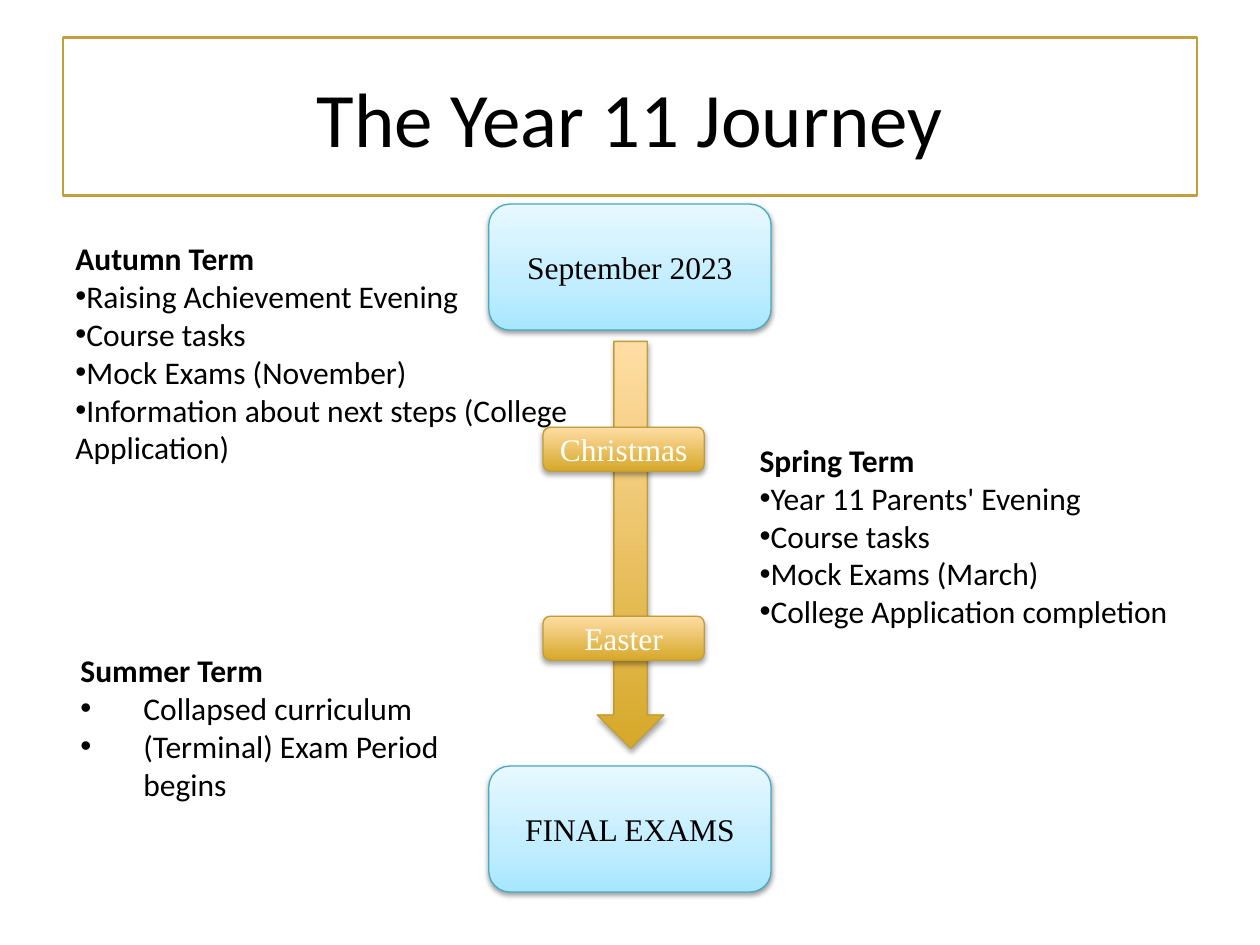
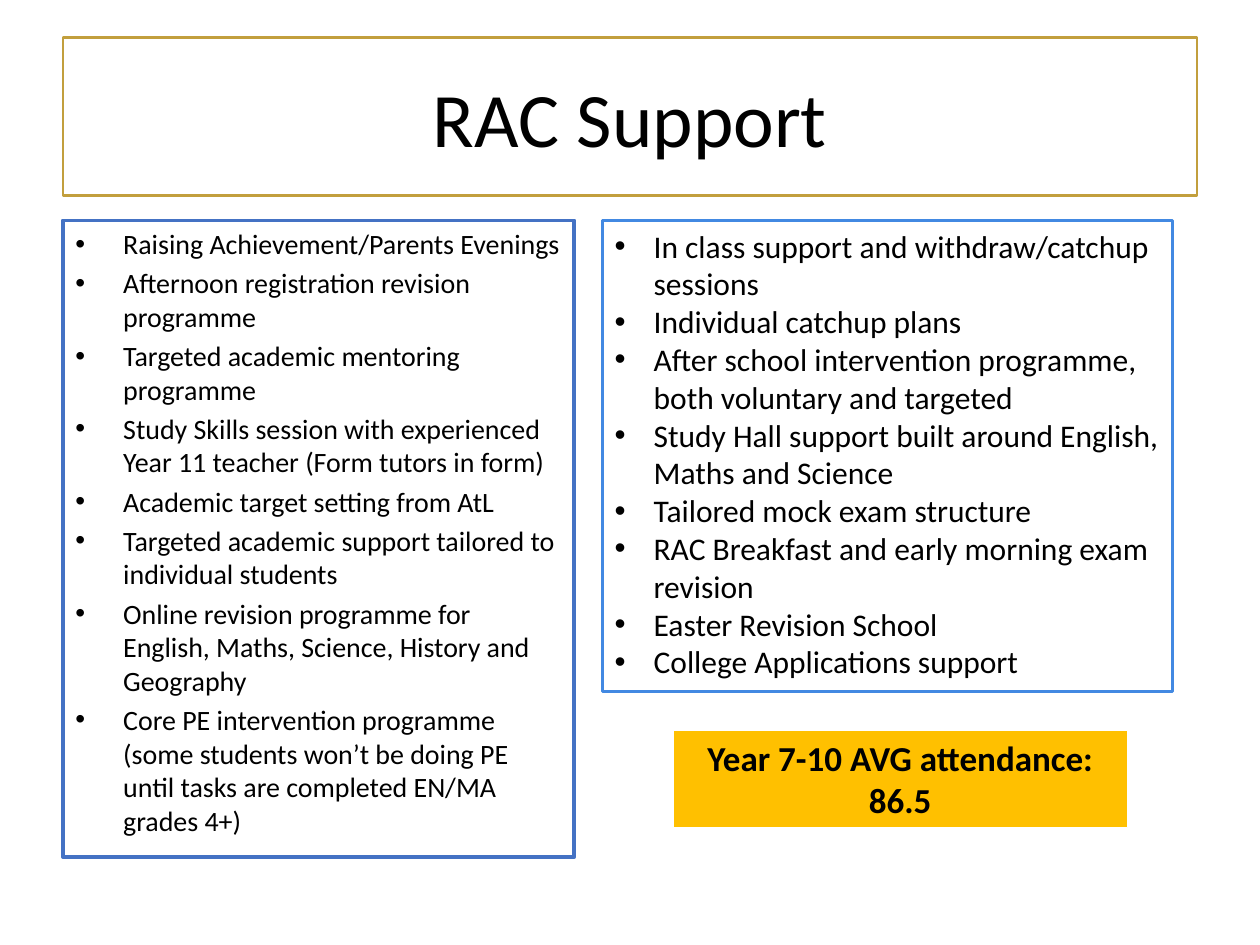
from dataclasses import dataclass

from lxml import etree
from pptx import Presentation
from pptx.dml.color import RGBColor
from pptx.enum import shapes, text
from pptx.oxml import ns
from pptx.util import Inches, Pt


@dataclass(frozen=True)
class Theme:
    body_font: str = "Calibri"
    diagram_font: str = "Times New Roman"
    title_size: int = 44
    callout_size: int = 20
    text_size: int = 18
    small_size: int = 16
    black: str = "000000"
    white: str = "FFFFFF"
    title_line: str = "C29F3D"
    left_panel_line: str = "4472C4"
    right_panel_line: str = "4289E2"
    amber: str = "FFC000"
    gold_line: str = "C19D38"
    sky_line: str = "46AAC5"
    # Gradient stops run from the bottom of a shape to its top
    gold: tuple = ((0, "D6A829"), (100, "FFDDA4"))
    sky: tuple = ((0, "A7E6FF"), (35, "C1EDFF"), (100, "E7F8FF"))


THEME = Theme()
SHAPE = shapes.MSO_SHAPE
CENTER = text.PP_ALIGN.CENTER
LEFT = text.PP_ALIGN.LEFT


def add_element(parent, tag, **attributes):
    element = etree.SubElement(parent, ns.qn(tag))
    for name, value in attributes.items():
        element.set(name, str(value))
    return element


# Text
def set_bullet(paragraph, indent):
    properties = paragraph._p.get_or_add_pPr()
    properties.set("marL", str(Inches(indent)))
    properties.set("indent", str(-Inches(indent)))
    add_element(properties, "a:buFont", typeface="Arial")
    add_element(properties, "a:buChar", char="•")


def write_text(shape, lines, size=THEME.text_size, font=THEME.body_font,
               color=THEME.black, bold=False, align=LEFT, middle=False,
               heading=None, bullet_indent=None, gap=0):
    frame = shape.text_frame
    frame.word_wrap = True
    frame.vertical_anchor = text.MSO_ANCHOR.MIDDLE if middle else text.MSO_ANCHOR.TOP
    all_lines = ([heading] if heading else []) + lines
    for index, line in enumerate(all_lines):
        is_heading = heading is not None and index == 0
        paragraph = frame.add_paragraph() if index else frame.paragraphs[0]
        paragraph.alignment = align
        if index and gap:
            paragraph.space_before = Pt(gap)
        if bullet_indent is not None and not is_heading:
            set_bullet(paragraph, bullet_indent)
        run = paragraph.add_run()
        run.text = line
        run.font.name = font
        run.font.size = Pt(size)
        run.font.bold = bold or is_heading
        run.font.color.rgb = RGBColor.from_string(color)


# Shapes
def add_box(slide, left, top, width, height, kind=SHAPE.RECTANGLE,
            fill=None, line=None, line_width=0.75):
    shape = slide.shapes.add_shape(
        kind, Inches(left), Inches(top), Inches(width), Inches(height))
    shape.shadow.inherit = False
    if fill:
        shape.fill.solid()
        shape.fill.fore_color.rgb = RGBColor.from_string(fill)
    else:
        shape.fill.background()
    if line:
        shape.line.color.rgb = RGBColor.from_string(line)
        shape.line.width = Pt(line_width)
    else:
        shape.line.fill.background()
    return shape


def add_glossy_shape(slide, left, top, width, height, kind, stops, line,
                     shadow_opacity, shadow_distance):
    shape = add_box(slide, left, top, width, height, kind, line=line)
    shape.fill.gradient()
    shape.fill.gradient_angle = 90
    stop_list = shape._element.spPr.find(".//" + ns.qn("a:gsLst"))
    for stop in list(stop_list):
        stop_list.remove(stop)
    for position, color in stops:
        stop = add_element(stop_list, "a:gs", pos=position * 1000)
        add_element(stop, "a:srgbClr", val=color)
    effects = shape._element.spPr.find(ns.qn("a:effectLst"))
    shadow = add_element(effects, "a:outerShdw", blurRad=Pt(3.1),
                         dist=Pt(shadow_distance), dir=90 * 60000, rotWithShape=0)
    shadow_color = add_element(shadow, "a:srgbClr", val=THEME.black)
    add_element(shadow_color, "a:alpha", val=shadow_opacity * 1000)
    return shape


def add_gold_shape(slide, left, top, width, height, kind):
    return add_glossy_shape(slide, left, top, width, height, kind,
                            THEME.gold, THEME.gold_line, 35, 1.8)


def add_milestone(slide, top, label):
    milestone = add_glossy_shape(slide, 3.88, top, 2.24, 1, SHAPE.ROUNDED_RECTANGLE,
                                 THEME.sky, THEME.sky_line, 38, 1.6)
    write_text(milestone, [label], font=THEME.diagram_font, align=CENTER, middle=True)


def add_holiday(slide, top, label):
    holiday = add_gold_shape(slide, 4.31, top, 1.28, 0.35, SHAPE.ROUNDED_RECTANGLE)
    write_text(holiday, [label], font=THEME.diagram_font, color=THEME.white,
               align=CENTER, middle=True)


def add_term(slide, left, top, width, height, name, events, indent=0):
    box = slide.shapes.add_textbox(
        Inches(left), Inches(top), Inches(width), Inches(height))
    write_text(box, events, heading=name, bullet_indent=indent)


def add_titled_slide(presentation, title):
    slide = presentation.slides.add_slide(presentation.slide_layouts[6])
    box = add_box(slide, 0.5, 0.3, 9, 1.25, line=THEME.title_line, line_width=1.5)
    write_text(box, [title], size=THEME.title_size, align=CENTER, middle=True)
    return slide


# Slides
def build_journey(presentation):
    slide = add_titled_slide(presentation, "The Year 11 Journey")

    # Timeline
    add_gold_shape(slide, 4.74, 2.71, 0.53, 3.23, SHAPE.DOWN_ARROW)
    add_milestone(slide, 1.62, "September 2023")
    add_milestone(slide, 6.08, "FINAL EXAMS")

    # Terms
    add_term(slide, 0.5, 1.85, 4.35, 1.92, "Autumn Term", [
        "Raising Achievement Evening",
        "Course tasks",
        "Mock Exams (November)",
        "Information about next steps (College Application)",
    ])
    add_term(slide, 5.93, 3.45, 4.01, 1.62, "Spring Term", [
        "Year 11 Parents' Evening",
        "Course tasks",
        "Mock Exams (March)",
        "College Application completion",
    ])
    add_term(slide, 0.54, 5.12, 3.18, 1.31, "Summer Term", [
        "Collapsed curriculum",
        "(Terminal) Exam Period begins",
    ], indent=0.5)

    # Holidays between the terms
    add_holiday(slide, 3.39, "Christmas")
    add_holiday(slide, 4.89, "Easter")


def build_support(presentation):
    slide = add_titled_slide(presentation, "RAC Support")

    # Support panels
    left_panel = add_box(slide, 0.5, 1.75, 4.06, 5.05,
                         line=THEME.left_panel_line, line_width=2.25)
    write_text(left_panel, [
        "Raising Achievement/Parents Evenings",
        "Afternoon registration revision programme",
        "Targeted academic mentoring programme",
        "Study Skills session with experienced Year 11 teacher (Form tutors in form)",
        "Academic target setting from AtL",
        "Targeted academic support tailored to individual students",
        "Online revision programme for English, Maths, Science, History and Geography",
        "Core PE intervention programme (some students won’t be doing PE until "
        "tasks are completed EN/MA grades 4+)",
    ], size=THEME.small_size, bullet_indent=0.38, gap=3.2)

    right_panel = add_box(slide, 4.78, 1.75, 4.53, 3.74,
                          line=THEME.right_panel_line, line_width=1.75)
    write_text(right_panel, [
        "In class support and withdraw/catchup sessions",
        "Individual catchup plans",
        "After school intervention programme, both voluntary and targeted",
        "Study Hall support built around English, Maths and Science",
        "Tailored mock exam structure",
        "RAC Breakfast and early morning exam revision",
        "Easter Revision School",
        "College Applications support",
    ], bullet_indent=0.31)

    # Attendance callout
    callout = add_box(slide, 5.34, 5.8, 3.61, 0.77, fill=THEME.amber, line=THEME.white)
    write_text(callout, ["Year 7-10 AVG attendance: 86.5"],
               size=THEME.callout_size, bold=True, align=CENTER)


def main():
    presentation = Presentation()
    presentation.slide_width = Inches(10)
    presentation.slide_height = Inches(7.5)
    build_journey(presentation)
    build_support(presentation)
    presentation.save("out.pptx")


if __name__ == "__main__":
    main()
